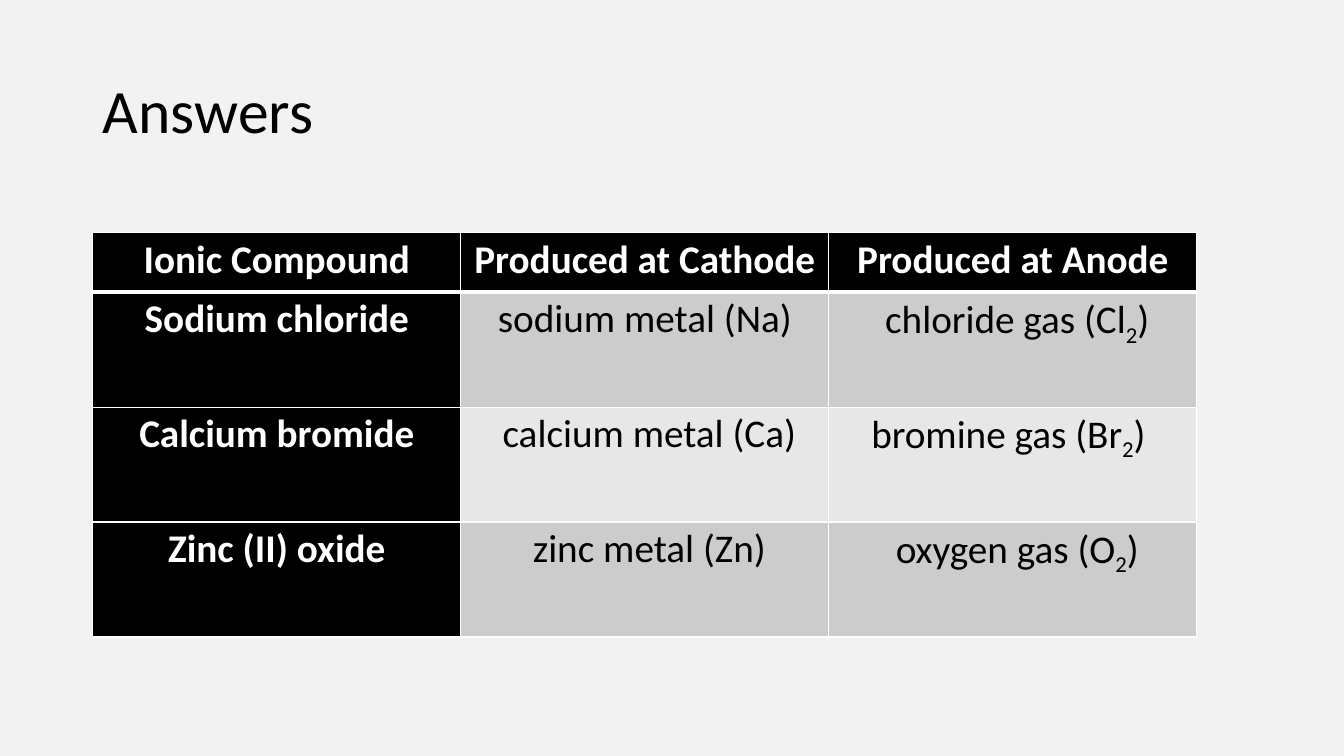
from typing import NamedTuple

from lxml.etree import SubElement as Sub
from pptx import Presentation
from pptx.dml.color import RGBColor as Rgb
from pptx.enum.text import MSO_ANCHOR as Anchor, PP_ALIGN as Align
from pptx.oxml.ns import qn
from pptx.util import Pt

PX = 9144  # 100 px to the inch
FONT = "Calibri"
HUES = {"back": "F2F2F2", "ink": "000000", "white": "FFFFFF",
        "dark": "CCCCCC", "light": "E7E7E7"}


class Entry(NamedTuple):
    text: str
    sub: str = ""
    tail: str = ""


ROWS = [
    [Entry("Ionic Compound"), Entry("Produced at Cathode"), Entry("Produced at Anode")],
    [Entry("Sodium chloride"), Entry("sodium metal (Na)"), Entry(" chloride gas (Cl", "2", ")")],
    [Entry("Calcium bromide"), Entry(" calcium metal (Ca)"), Entry("bromine gas (Br", "2", ") ")],
    [Entry("Zinc (II) oxide"), Entry(" zinc metal (Zn)"), Entry(" oxygen gas (O", "2", ")")],
]
WIDTH, HEAD, BODY = 365, 59, 114


def hue(name: str) -> Rgb:
    return Rgb.from_string(HUES[name])


def add_run(para, text: str, size: int, tone: str, bold: bool = False, sub: bool = False) -> None:
    run = para.add_run()
    run.text = text
    font = run.font
    font.name, font.size, font.bold = FONT, Pt(size), bold
    font.color.rgb = hue(tone)
    if sub:
        run._r.get_or_add_rPr().set("baseline", "-25000")


def add_edges(cell, head: bool) -> None:
    """Draw white borders, with a thick one below the header row."""
    props = cell._tc.get_or_add_tcPr()
    thick = {"lnB"} if head else set()
    for side in ("lnL", "lnR", "lnT", "lnB"):
        line = Sub(props, qn(f"a:{side}"), w=str(Pt(3 if side in thick else 1)))
        Sub(Sub(line, qn("a:solidFill")), qn("a:srgbClr"), val=HUES["white"])


def fill_cell(cell, entry: Entry, row: int, col: int) -> None:
    label = row == 0 or col == 0
    add_edges(cell, row == 0)
    cell.fill.solid()
    cell.fill.fore_color.rgb = hue("ink" if label else "dark" if row % 2 else "light")
    cell.margin_left = cell.margin_right = 7 * PX
    cell.margin_top = cell.margin_bottom = 0
    para = cell.text_frame.paragraphs[0]
    para.alignment, para.line_spacing = Align.CENTER, 1.07
    for part, text in enumerate(entry):
        if text:
            add_run(para, text, 28, "white" if label else "ink", label, part == 1)


def add_title(slide, text: str) -> None:
    frame = slide.shapes.add_textbox(92 * PX, 40 * PX, 1150 * PX, 145 * PX).text_frame
    frame.word_wrap = True
    frame.vertical_anchor = Anchor.MIDDLE
    para = frame.paragraphs[0]
    para.line_spacing = 0.9
    add_run(para, text, 44, "ink")


def add_grid(slide) -> None:
    count, cols = len(ROWS), len(ROWS[0])
    high = HEAD + BODY * (count - 1)
    table = slide.shapes.add_table(
        count, cols, 92 * PX, 231 * PX, WIDTH * cols * PX, high * PX).table
    for col in table.columns:
        col.width = WIDTH * PX
    for r, row in enumerate(ROWS):
        table.rows[r].height = (BODY if r else HEAD) * PX
        for c, entry in enumerate(row):
            fill_cell(table.cell(r, c), entry, r, c)


def main() -> None:
    deck = Presentation()
    deck.slide_width, deck.slide_height = 1333 * PX, 750 * PX
    slide = deck.slides.add_slide(deck.slide_layouts[6])
    slide.background.fill.solid()
    slide.background.fill.fore_color.rgb = hue("back")
    add_title(slide, "Answers")
    add_grid(slide)
    deck.save("out.pptx")


if __name__ == "__main__":
    main()
